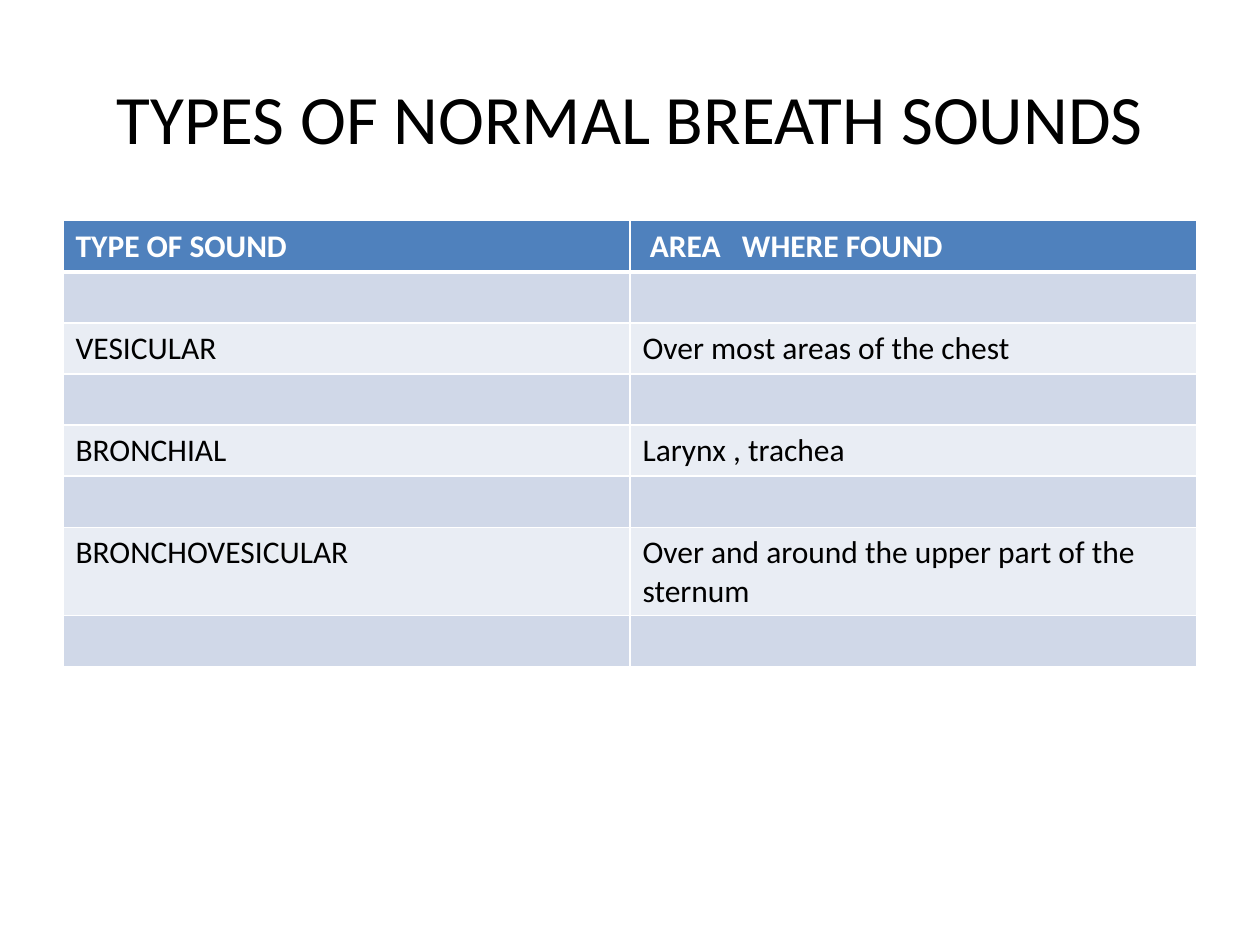
import pptx
import pptx.dml.color
import pptx.enum.text
import pptx.oxml
import pptx.oxml.ns
import pptx.util
from pptx.util import Cm

COLOURS = {
    "text": "000000",
    "header": "4F81BD",
    "header_text": "FFFFFF",
    "band_dark": "D0D8E8",
    "band_light": "E9EDF4",
    "border": "FFFFFF",
}
BLANK_LAYOUT = 6
HEADER = ("TYPE OF SOUND", "AREA   WHERE FOUND")
SOUNDS = (
    ("VESICULAR", "Over most areas of the chest"),
    ("BRONCHIAL", "Larynx , trachea"),
    ("BRONCHOVESICULAR", "Over and around the upper part of the sternum"),
)


def rgb(name):
    return pptx.dml.color.RGBColor.from_string(COLOURS[name])


class SlideBuilder:
    """Holds the type style and the slide being filled."""

    def __init__(self, slide, font="Calibri"):
        self.slide = slide
        self.font = font

    def add_span(self, para, text, colour, **formats):
        span = para.add_run()
        span.text = text
        span.font.color.rgb = rgb(colour)
        for name, value in {"name": self.font, **formats}.items():
            setattr(span.font, name, value)

    def add_title(self, text, left, top, width, height):
        box = self.slide.shapes.add_textbox(left, top, width, height)
        frame = box.text_frame
        frame.word_wrap = True
        frame.vertical_anchor = pptx.enum.text.MSO_ANCHOR.MIDDLE
        para = frame.paragraphs[0]
        para.alignment = pptx.enum.text.PP_ALIGN.CENTER
        self.add_span(para, text, "text", size=pptx.util.Pt(39.6))

    def add_borders(self, cell, bottom):
        """Line all four sides; only the bottom width (points) varies."""
        properties = cell._tc.get_or_add_tcPr()
        widths = {"lnL": 1, "lnR": 1, "lnT": 1, "lnB": bottom}
        for index, (side, points) in enumerate(widths.items()):
            line = pptx.oxml.parse_xml(
                f'<a:{side} {pptx.oxml.ns.nsdecls("a")} w="{pptx.util.Pt(points)}">'
                f'<a:solidFill><a:srgbClr val="{COLOURS["border"]}"/></a:solidFill>'
                f"</a:{side}>"
            )
            properties.insert(index, line)

    def add_table(self, rows, left, top, width, row_height):
        """First row is the header; the rest alternate dark and light bands."""
        frame = self.slide.shapes.add_table(
            len(rows), len(rows[0]), left, top, width, row_height * len(rows)
        )
        for row_index, texts in enumerate(rows):
            is_header = row_index == 0
            band = "band_dark" if row_index % 2 else "band_light"
            for column_index, text in enumerate(texts):
                cell = frame.table.cell(row_index, column_index)
                cell.fill.solid()
                cell.fill.fore_color.rgb = rgb("header" if is_header else band)
                self.add_borders(cell, bottom=3 if is_header else 1)
                if text:
                    self.add_span(
                        cell.text_frame.paragraphs[0],
                        text,
                        "header_text" if is_header else "text",
                        size=pptx.util.Pt(18),
                        bold=is_header,
                    )
        return frame.table


def main():
    deck = pptx.Presentation()
    deck.slide_width, deck.slide_height = Cm(25.4), Cm(19.05)
    page = deck.slides.add_slide(deck.slide_layouts[BLANK_LAYOUT])
    builder = SlideBuilder(page)

    left, width = Cm(1.27), Cm(22.86)
    builder.add_title("TYPES OF NORMAL BREATH SOUNDS", left, Cm(0.76), width, Cm(3.18))

    spacer = ("", "")
    rows = [HEADER, spacer]
    for sound in SOUNDS:
        rows += [sound, spacer]
    table = builder.add_table(rows, left, Cm(4.45), width, Cm(1.03))
    table.cell(0, 1).margin_left = Cm(0.4)

    deck.save("out.pptx")


if __name__ == "__main__":
    main()
